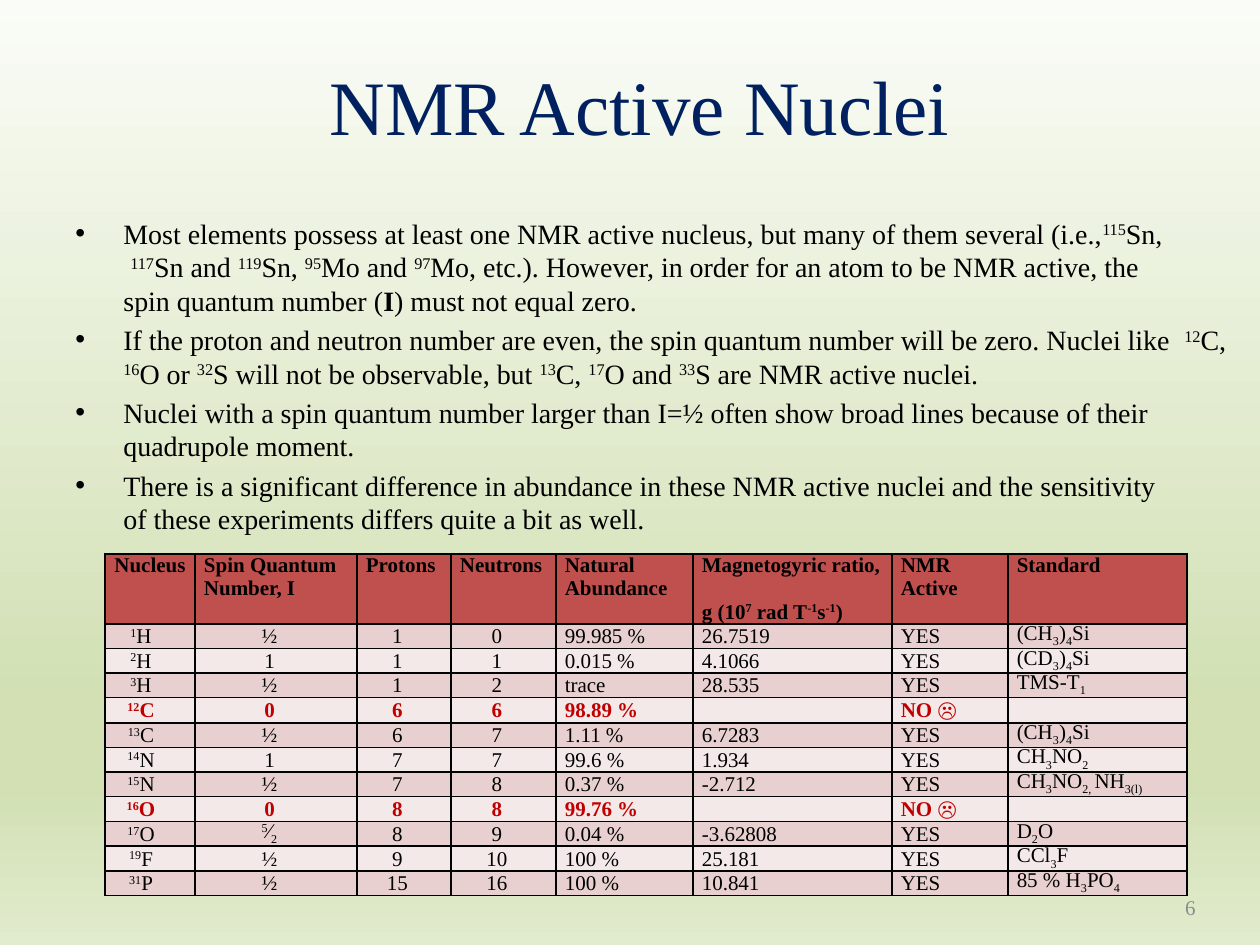
"""Build the slide on NMR active nuclei with its bullets and table of properties."""
import copy

import lxml.etree
import pptx
import pptx.dml.color
import pptx.enum.text
import pptx.oxml.ns
import pptx.util

RGB = pptx.dml.color.RGBColor
BLACK = RGB(0x00, 0x00, 0x00)
NAVY = RGB(0x00, 0x20, 0x60)
GRAY = RGB(0x8C, 0x8C, 0x8C)
RED = RGB(0xC0, 0x00, 0x00)
HEADER_FILL = RGB(0xC0, 0x50, 0x4D)
ODD_FILL = RGB(0xE8, 0xD0, 0xD0)
EVEN_FILL = RGB(0xF4, 0xE9, 0xE9)
GRADIENT = [
    (0, RGB(0xFA, 0xFC, 0xF7)),
    (74, RGB(0xD2, 0xE0, 0xB4)),
    (83, RGB(0xD2, 0xE0, 0xB4)),
    (100, RGB(0xE1, 0xEB, 0xCD)),
]
ALIGN = pptx.enum.text.PP_ALIGN
ANCHOR = pptx.enum.text.MSO_ANCHOR
BASELINES = {"^": "30000", "_": "-25000"}
SCALE = 914400 / 126
qn = pptx.oxml.ns.qn


def px(length):
    return pptx.util.Emu(round(length * SCALE))


def write(para, text, size, color, bold=False):
    """Fill a paragraph; parts between bars start with ^ (raised), _ (lowered) or * (bold)."""
    for part in text.split("|"):
        mark = part[:1] if part[:1] in ("^", "_", "*") else ""
        for number, line in enumerate(part[len(mark):].split("\n")):
            if number:
                para.add_line_break()
                para._p[-1].append(copy.deepcopy(span._r.rPr))
            span = para.add_run()
            span.text = line
            look = {"name": "Times New Roman", "size": pptx.util.Pt(size), "bold": bold or mark == "*"}
            for name, value in look.items():
                setattr(span.font, name, value)
            span.font.color.rgb = color
            if mark in BASELINES:
                span._r.rPr.set("baseline", BASELINES[mark])


deck = pptx.Presentation()
deck.slide_width, deck.slide_height = px(1260), px(945)
page = deck.slides.add_slide(deck.slide_layouts[6])

backdrop = page.background.fill
backdrop.gradient()
backdrop.gradient_angle = 270
stops = next(page.element.iter(qn("a:gsLst")))
for stop in list(stops):
    stops.remove(stop)
for position, color in GRADIENT:
    stop = lxml.etree.SubElement(stops, qn("a:gs"), pos=str(position * 1000))
    lxml.etree.SubElement(stop, qn("a:srgbClr"), val=str(color))

bullets = [
    "Most elements possess at least one NMR active nucleus, but many of them several (i.e.,|^115|Sn,\n "
    "|^117|Sn and |^119|Sn, |^95|Mo and |^97|Mo, etc.). However, in order for an atom to be NMR active, the \n"
    "spin quantum number (|*I|) must not equal zero.",
    "If the proton and neutron number are even, the spin quantum number will be zero. Nuclei like  "
    "|^12|C, |^16|O or |^32|S will not be observable, but |^13|C, |^17|O and |^33|S are NMR active nuclei.",
    "Nuclei with a spin quantum number larger than I=½ often show broad lines because of their "
    "quadrupole moment.",
    "There is a significant difference in abundance in these NMR active nuclei and the sensitivity \n"
    "of these experiments differs quite a bit as well.",
]
texts = [
    ((73, 21, 1134, 168), ["NMR Active Nuclei"], 44, NAVY, ALIGN.CENTER, ANCHOR.MIDDLE),
    ((63, 210, 1176, 368), bullets, 16, BLACK, ALIGN.LEFT, ANCHOR.TOP),
    ((914, 882, 294, 50), ["6"], 12, GRAY, ALIGN.RIGHT, ANCHOR.MIDDLE),
]
for place, lines, size, color, align, anchor in texts:
    frame = page.shapes.add_textbox(*map(px, place)).text_frame
    frame.word_wrap = True
    frame.vertical_anchor = anchor
    for number, line in enumerate(lines):
        para = frame.add_paragraph() if number else frame.paragraphs[0]
        para.alignment = align
        write(para, line, size, color)
        if lines is bullets:
            para.space_before = pptx.util.Pt(3.2)
            properties = para._p.get_or_add_pPr()
            properties.set("marL", str(px(48)))
            properties.set("indent", str(-px(48)))
            lxml.etree.SubElement(properties, qn("a:buFont"), typeface="Arial")
            lxml.etree.SubElement(properties, qn("a:buChar"), char="•")

rows = [
    ["Nucleus", "Spin Quantum Number, I", "Protons", "Neutrons", "Natural Abundance",
     "Magnetogyric ratio, \ng (10|^7| rad T|^-1|s|^-1|)", "NMR Active", "Standard"],
    ["^1|H", "½", "1", "0", "99.985 %", "26.7519", "YES", "(CH|_3|)|_4|Si"],
    ["^2|H", "1", "1", "1", "0.015 %", "4.1066", "YES", "(CD|_3|)|_4|Si"],
    ["^3|H", "½", "1", "2", "trace", "28.535", "YES", "TMS-T|_1"],
    ["^12|C", "0", "6", "6", "98.89 %", "", "NO ☹", ""],
    ["^13|C", "½", "6", "7", "1.11 %", "6.7283", "YES", "(CH|_3|)|_4|Si"],
    ["^14|N", "1", "7", "7", "99.6 %", "1.934", "YES", "CH|_3|NO|_2"],
    ["^15|N", "½", "7", "8", "0.37 %", "-2.712", "YES", "CH|_3|NO|_2, |NH|_3(l)"],
    ["^16|O", "0", "8", "8", "99.76 %", "", "NO ☹", ""],
    ["^17|O", "^5|∕|_2", "8", "9", "0.04 %", "-3.62808", "YES", "D|_2|O"],
    ["^19|F", "½", "9", "10", "100 %", "25.181", "YES", "CCl|_3|F"],
    ["^31|P", "½", "15", "16", "100 %", "10.841", "YES", "85 % H|_3|PO|_4"],
]
widths = [90, 162, 94, 105, 137, 199, 116, 179]
heights = [53] + [24] * 11
table = page.shapes.add_table(
    len(rows), len(widths), px(105), px(554), px(sum(widths)), px(sum(heights))).table
for column, width in zip(table.columns, widths):
    column.width = px(width)
for r, (row, height) in enumerate(zip(rows, heights)):
    table.rows[r].height = px(height)
    inactive = row[6].startswith("NO")
    for c, text in enumerate(row):
        cell = table.cell(r, c)
        centred = r > 0 and c < 4
        right = (22 if c else 27) if centred else 9
        insets = {"margin_left": px(9), "margin_right": px(right), "margin_top": 0, "margin_bottom": 0}
        for name, value in insets.items():
            setattr(cell, name, value)
        para = cell.text_frame.paragraphs[0]
        para.alignment = ALIGN.CENTER if centred or c == 0 else ALIGN.LEFT
        para.line_spacing = pptx.util.Pt(14 if r else 13.3)
        if text:
            write(para, text, 12, RED if inactive else BLACK, r == 0 or inactive)
        else:
            lxml.etree.SubElement(para._p, qn("a:endParaRPr"), sz="1200")
        borders = cell._tc.get_or_add_tcPr()
        for side in ("a:lnL", "a:lnR", "a:lnT", "a:lnB"):
            line = lxml.etree.SubElement(borders, qn(side), w="12700")
            paint = lxml.etree.SubElement(line, qn("a:solidFill"))
            lxml.etree.SubElement(paint, qn("a:srgbClr"), val=str(BLACK))
        cell.fill.solid()
        cell.fill.fore_color.rgb = HEADER_FILL if r == 0 else ODD_FILL if r % 2 else EVEN_FILL

deck.save("out.pptx")
